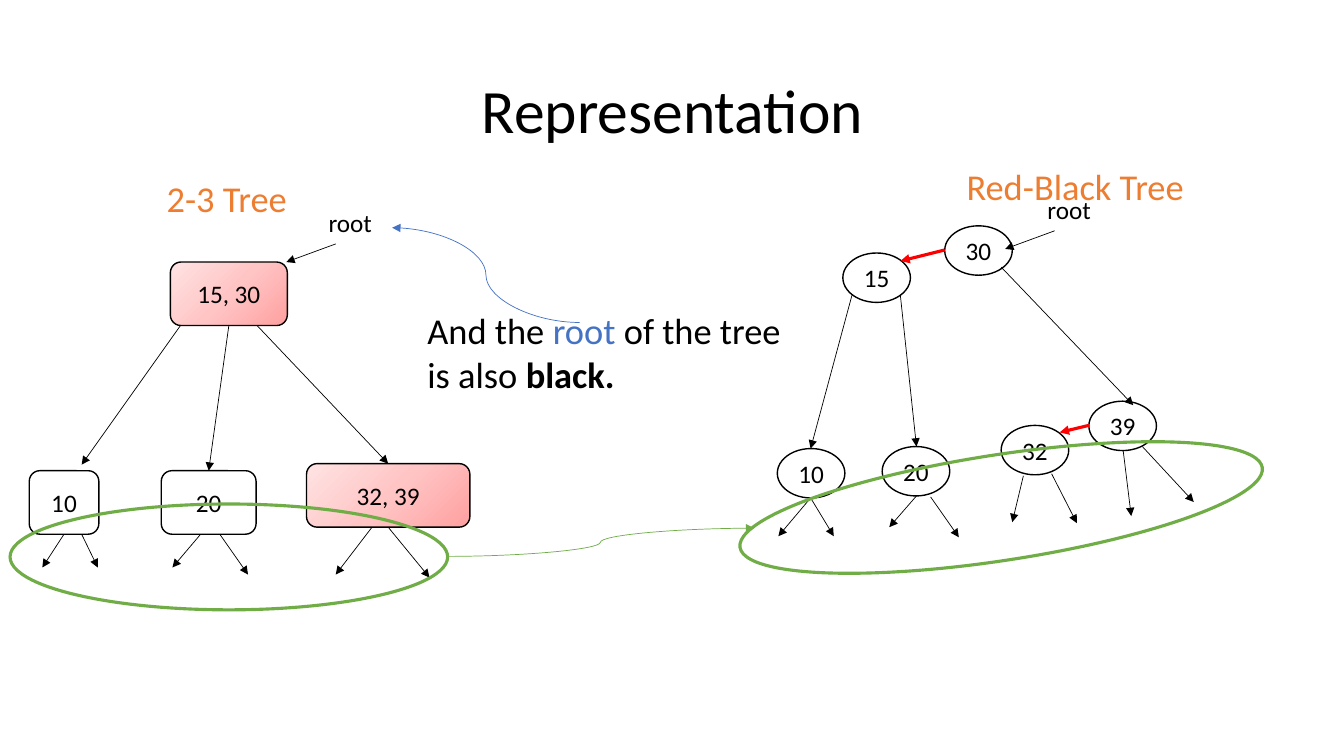
from copy import deepcopy

from pptx import Presentation
from pptx.dml.color import RGBColor
from pptx.enum.shapes import MSO_CONNECTOR as LINK, MSO_SHAPE as SHAPE
from pptx.enum.text import MSO_ANCHOR as ANCHOR, MSO_AUTO_SIZE as FIT, PP_ALIGN as ALIGN
from pptx.oxml.ns import qn
from pptx.oxml.xmlchemy import OxmlElement
from pptx.util import Inches, Pt

FONT = "Calibri"
BLACK = RGBColor(0x00, 0x00, 0x00)
RED = RGBColor(0xFF, 0x00, 0x00)
ORANGE = RGBColor(0xED, 0x7D, 0x31)
BLUE = RGBColor(0x44, 0x72, 0xC4)
GREEN = RGBColor(0x70, 0xAD, 0x47)
PINKS = [RGBColor(0xFF, 0xA0, 0xA0), RGBColor(0xFF, 0xC5, 0xC5), RGBColor(0xFF, 0xE3, 0xE3)]


def style_span(span, size, color, bold=False):
    """Set the font of one run."""
    span.font.name = FONT
    span.font.size = Pt(size)
    span.font.color.rgb = color
    span.font.bold = bold


def add_label(page, box, spans, size, align=ALIGN.LEFT):
    """Add a wrapping text box made of (text, color, bold) spans."""
    frame = page.shapes.add_textbox(*map(Inches, box)).text_frame
    frame.word_wrap = True
    frame.auto_size = FIT.SHAPE_TO_FIT_TEXT
    para = frame.paragraphs[0]
    para.alignment = align
    for text, color, bold in spans:
        span = para.add_run()
        span.text = text
        style_span(span, size, color, bold)


def add_outline(page, kind, box, color, width):
    """Add an unfilled preset shape with a solid outline."""
    shape = page.shapes.add_shape(kind, *map(Inches, box))
    shape.shadow.inherit = False
    shape.fill.background()
    shape.line.color.rgb = color
    shape.line.width = Pt(width)
    return shape


def fill_pink(shape):
    """Fill a shape with the diagonal pink gradient."""
    shape.fill.gradient()
    shape.fill.gradient_angle = 135
    stop_list = shape._element.find(".//" + qn("a:gsLst"))
    stop_list.insert(1, deepcopy(stop_list[0]))
    for index, (stop, color) in enumerate(zip(shape.fill.gradient_stops, PINKS)):
        stop.position = index / 2
        stop.color.rgb = color


def add_node(page, kind, box, text):
    """Add a tree node with its key centred."""
    node = add_outline(page, kind, box, BLACK, 1)
    frame = node.text_frame
    frame.text = text
    frame.word_wrap = False
    frame.vertical_anchor = ANCHOR.MIDDLE
    para = frame.paragraphs[0]
    para.alignment = ALIGN.CENTER
    style_span(para.runs[0], 18, BLACK)
    return node


def add_arrow(page, start, end, color=BLACK, width=0.5, kind=LINK.STRAIGHT):
    """Add a connector with an arrowhead at its end."""
    arrow = page.shapes.add_connector(kind, *map(Inches, (*start, *end)))
    arrow.line.color.rgb = color
    arrow.line.width = Pt(width)
    head = OxmlElement("a:tailEnd")
    head.set("type", "triangle")
    arrow.line._get_or_add_ln().append(head)
    arrow._element.spPr.append(OxmlElement("a:effectLst"))
    return arrow


def add_arrows(page, left, top, ends, **style):
    """Add arrows given as (x1, y1, x2, y2) offsets and return them."""
    return [add_arrow(page, (left + x1, top + y1), (left + x2, top + y2), **style)
            for x1, y1, x2, y2 in ends]


def add_root_mark(page, left, top):
    """Add the root label and its short arrow."""
    add_label(page, (left, top, 0.92, 0.4), [("root", BLACK, False)], 18)
    add_arrow(page, (left + 0.17, top + 0.41), (left - 0.32, top + 0.59))


def add_two_three_tree(page, left, top):
    """Draw the 2-3 tree from its top left corner."""
    add_label(page, (left + 1.36, top, 1.58, 0.54), [("2-3 Tree", ORANGE, False)], 26, ALIGN.CENTER)
    places = {
        "10": (0.19, 2.97, 0.69),
        "20": (1.5, 2.97, 0.94),
        "32, 39": (2.94, 2.9, 1.62),
        "15, 30": (1.59, 0.9, 1.16),
    }
    nodes = {}
    for key, (x, y, width) in places.items():
        nodes[key] = add_node(page, SHAPE.ROUNDED_RECTANGLE, (left + x, top + y, width, 0.63), key)
        if "," in key:
            fill_pink(nodes[key])
    _, middle, last = add_arrows(page, left, top, [
        (1.69, 1.53, 0.71, 2.91), (2.17, 1.53, 1.97, 2.97), (2.45, 1.53, 3.75, 2.9)])
    middle.begin_connect(nodes["15, 30"], 2)
    middle.end_connect(nodes["20"], 0)
    last.end_connect(nodes["32, 39"], 0)
    leaves = add_arrows(page, left, top, [
        (0.53, 3.6, 0.32, 3.93), (0.71, 3.6, 0.87, 3.93),
        (1.89, 3.6, 1.61, 3.93), (2.08, 3.6, 2.36, 4),
        (3.59, 3.53, 3.23, 4), (3.75, 3.53, 4.16, 4.03)])
    leaves[0].begin_connect(nodes["10"], 2)
    leaves[-1].begin_connect(nodes["32, 39"], 2)
    add_outline(page, SHAPE.OVAL, (left, top + 3.3, 4.34, 1.05), GREEN, 2.25)
    add_root_mark(page, left + 3.06, top + 0.31)


def add_red_black_tree(page, left, top):
    """Draw the red-black tree from its top left corner."""
    add_label(page, (left + 2.07, top + 0.08, 2.59, 0.54),
              [("Red-Black Tree", ORANGE, False)], 26, ALIGN.CENTER)
    places = {
        "10": (0.41, 2.95), "20": (1.45, 2.93), "32": (2.63, 2.72),
        "39": (3.5, 2.48), "30": (2.07, 0.74), "15": (1.06, 1.01),
    }
    for key, (x, y) in places.items():
        add_node(page, SHAPE.OVAL, (left + x, top + y, 0.67, 0.49), key)
    add_arrows(page, left, top, [
        (1.15, 1.43, 0.74, 2.95), (1.63, 1.43, 1.79, 2.93), (2.63, 1.15, 3.94, 2.52)])
    add_arrows(page, left, top, [(3.5, 2.72, 3.21, 2.79), (2.07, 0.98, 1.63, 1.09)],
               color=RED, width=2.25)
    add_arrows(page, left, top, [
        (0.74, 3.44, 0.42, 3.82), (0.74, 3.44, 0.97, 3.82),
        (1.79, 3.42, 1.52, 3.73), (1.93, 3.43, 2.21, 3.83),
        (2.85, 3.22, 2.74, 3.68), (3.13, 3.2, 3.38, 3.69),
        (3.84, 2.97, 3.92, 3.62), (4.03, 2.93, 4.54, 3.48)])
    leaf_ring = add_outline(page, SHAPE.OVAL, (left + 0.01, top + 3.01, 5.24, 1.05), GREEN, 2.25)
    leaf_ring.rotation = 351.3
    add_root_mark(page, left + 2.99, top + 0.38)


def add_remark(page, left, top):
    """Add the remark on the root with the curve that points to it."""
    add_label(page, (left, top, 3.86, 0.98), [
        ("And the ", BLACK, False), ("root", BLUE, False),
        (" of the tree is also ", BLACK, False), ("black.", BLACK, True)], 26)
    add_arrow(page, (left + 1.61, top + 0.19), (left - 0.25, top - 0.75), BLUE, kind=LINK.CURVE)


def add_title(page, box):
    """Place and format the slide title."""
    title = page.shapes.title
    title.left, title.top, title.width, title.height = map(Inches, box)
    title.text_frame.text = "Representation"
    title.text_frame.vertical_anchor = ANCHOR.MIDDLE
    para = title.text_frame.paragraphs[0]
    para.alignment = ALIGN.CENTER
    para.line_spacing = 0.9
    style_span(para.runs[0], 44, BLACK)


def main():
    """Build the slide and save it."""
    deck = Presentation()
    deck.slide_width, deck.slide_height = Inches(13.33), Inches(7.5)
    page = deck.slides.add_slide(deck.slide_layouts[5])
    add_title(page, (0.92, 0.4, 11.5, 1.45))
    add_two_three_tree(page, 0.1, 1.7)
    add_red_black_tree(page, 7.3, 1.5)
    add_remark(page, 4.14, 3.01)
    add_arrow(page, (4.43, 5.52), (7.48, 5.24), GREEN, kind=LINK.CURVE)
    deck.save("out.pptx")


if __name__ == "__main__":
    main()
